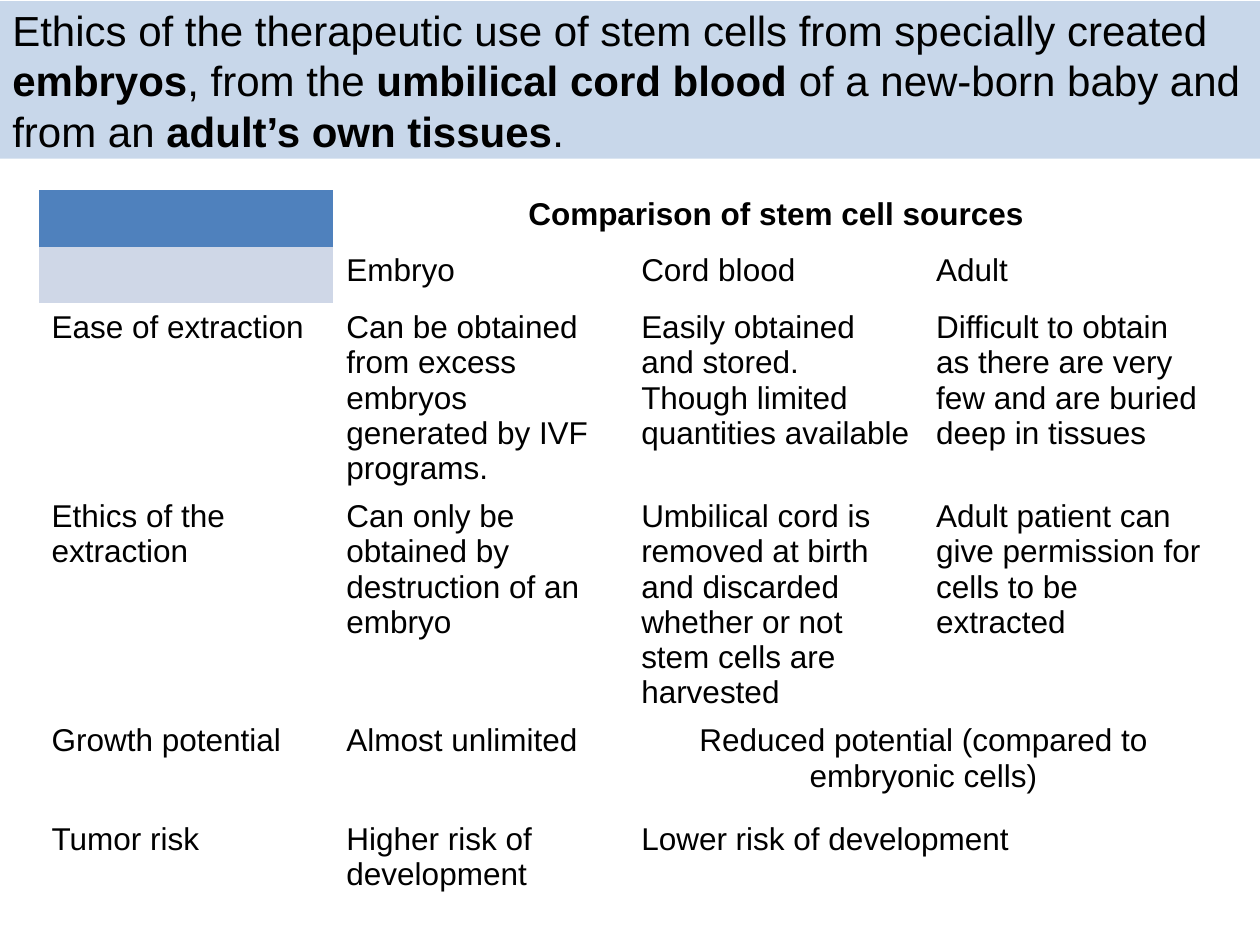
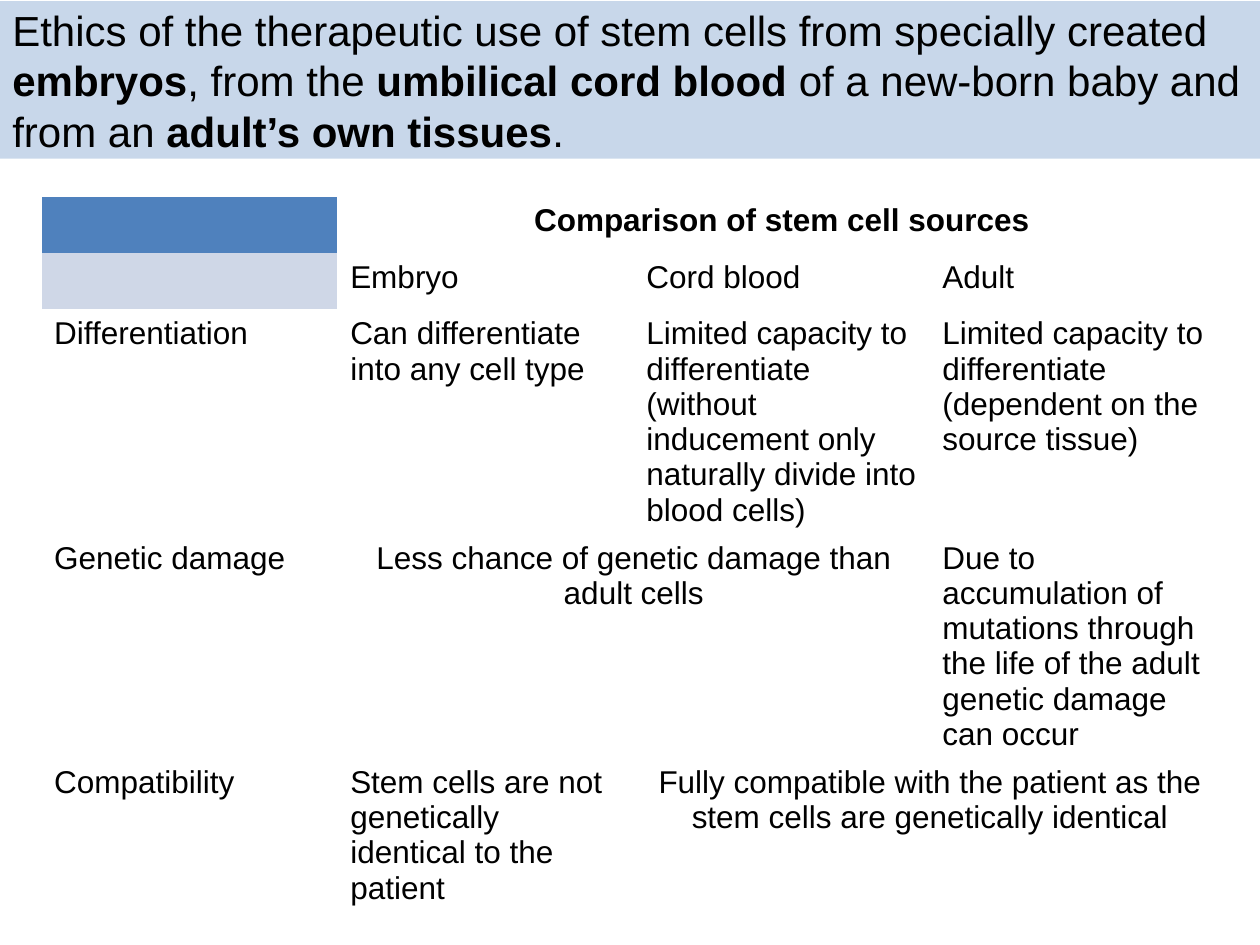
"""Builds two slides that compare the ethics of stem cell sources."""
from lxml.etree import SubElement
from pptx import Presentation
from pptx.dml.color import RGBColor
from pptx.enum.shapes import MSO_SHAPE
from pptx.enum.text import MSO_ANCHOR, PP_ALIGN
from pptx.oxml.ns import qn
from pptx.util import Inches, Pt

COLOURS = {"band": "B9CDE5", "corner": "4F81BD", "subcorner": "CFD7E7",
           "paper": "FFFFFF", "ink": "000000"}
FONT = "Arial"
NO_STYLE = "{2D5ABB26-0587-4C30-8999-92F81FD0307C}"
LEFT, CENTRE = PP_ALIGN.LEFT, PP_ALIGN.CENTER

HEADLINE = [
    ("Ethics of the therapeutic use of stem cells from specially created ", False),
    ("embryos", True),
    (", from the ", False),
    ("umbilical cord blood", True),
    (" of a new-born baby and from an ", False),
    ("adult’s own tissues", True),
    (".", False),
]

# Each row is (height, cells); a cell that spans columns is (text, span, alignment).
HEADER_ROWS = [
    (0.45, ["", ("Comparison of stem cell sources", 3, CENTRE)]),
    (0.45, ["", "Embryo", "Cord blood", "Adult"]),
]
COMPARISONS = [
    {"left": 0.31, "top": 1.51, "column": 2.34, "rows": [
        (1.44, ["Ease of extraction",
                "Can be obtained from excess embryos generated by IVF programs.",
                "Easily obtained and stored. Though limited quantities available",
                "Difficult to obtain as there are very few and are buried deep in tissues"]),
        (1.77, ["Ethics of the extraction",
                "Can only be obtained by destruction of an embryo",
                "Umbilical cord is removed at birth and discarded whether or not "
                "stem cells are harvested",
                "Adult patient can give permission for cells to be extracted"]),
        (0.78, ["Growth potential", "Almost unlimited",
                ("Reduced potential (compared to embryonic cells)", 2, CENTRE)]),
        (0.78, ["Tumor risk", "Higher risk of development",
                ("Lower risk of development", 2, LEFT)]),
    ]},
    {"left": 0.33, "top": 1.56, "column": 2.35, "rows": [
        (1.77, ["Differentiation",
                "Can differentiate into any cell type",
                "Limited capacity to differentiate (without inducement only "
                "naturally divide into blood cells)",
                "Limited capacity to differentiate (dependent on the source tissue)"]),
        (1.77, ["Genetic damage",
                ("Less chance of genetic damage than adult cells", 2, CENTRE),
                "Due to accumulation of mutations through the life of the adult "
                "genetic damage can occur"]),
        (1.11, ["Compatibility",
                "Stem cells are not genetically identical to the patient",
                ("Fully compatible with the patient as the stem cells are "
                 "genetically identical", 2, CENTRE)]),
    ]},
]


def write(frame, runs, size=18, align=LEFT):
    frame.word_wrap = True
    paragraph = frame.paragraphs[0]
    paragraph.alignment = align
    for text, bold in runs:
        run = paragraph.add_run()
        run.text = text
        run.font.name, run.font.size, run.font.bold = FONT, Pt(size), bold
        run.font.color.rgb = RGBColor.from_string(COLOURS["ink"])


def paint(fill, colour, holder, opacity=100):
    fill.solid()
    fill.fore_color.rgb = RGBColor.from_string(COLOURS[colour])
    if opacity < 100:
        srgb = holder.find(qn("a:solidFill")).find(qn("a:srgbClr"))
        SubElement(srgb, qn("a:alpha"), val=str(opacity * 1000))


def draw_borders(cell, edges):
    properties = cell._tc.get_or_add_tcPr()
    for edge in edges:
        line = SubElement(properties, qn(f"a:ln{edge}"), w=str(Pt(1)))
        SubElement(SubElement(line, qn("a:solidFill")), qn("a:srgbClr"),
                   val=COLOURS["paper"])


def add_headline(slide):
    band = slide.shapes.add_shape(MSO_SHAPE.RECTANGLE, 0, Inches(0.01),
                                  Inches(10), Inches(1.25))
    band.shadow.inherit = False
    band.line.fill.background()
    paint(band.fill, "band", band._element.spPr, opacity=78)
    band.text_frame.vertical_anchor = MSO_ANCHOR.MIDDLE
    write(band.text_frame, HEADLINE, size=24)


def add_comparison(slide, comparison):
    rows = HEADER_ROWS + comparison["rows"]
    heights = [height for height, _ in rows]
    grid = slide.shapes.add_table(
        len(rows), 4, Inches(comparison["left"]), Inches(comparison["top"]),
        Inches(4 * comparison["column"]), Inches(sum(heights))).table
    grid.first_row = grid.horz_banding = False
    grid._tbl.tblPr.find(qn("a:tableStyleId")).text = NO_STYLE
    for column in grid.columns:
        column.width = Inches(comparison["column"])

    for row_index, (height, entries) in enumerate(rows):
        grid.rows[row_index].height = Inches(height)
        column_index = 0
        for entry in entries:
            text, span, align = (entry, 1, LEFT) if isinstance(entry, str) else entry
            cell = grid.cell(row_index, column_index)
            if span > 1:
                cell.merge(grid.cell(row_index, column_index + span - 1))
            draw_borders(cell, "LRTB" if text else ["R", "RB"][row_index])
            properties = cell._tc.tcPr
            if text:
                paint(cell.fill, "paper", properties, opacity=60)
                write(cell.text_frame, [(text, row_index == 0)], align=align)
            else:
                paint(cell.fill, ["corner", "subcorner"][row_index], properties)
            column_index += span


def main():
    deck = Presentation()
    deck.slide_width, deck.slide_height = Inches(10), Inches(7.5)
    for comparison in COMPARISONS:
        slide = deck.slides.add_slide(deck.slide_layouts[6])
        add_headline(slide)
        add_comparison(slide, comparison)
    deck.save("out.pptx")


if __name__ == "__main__":
    main()
